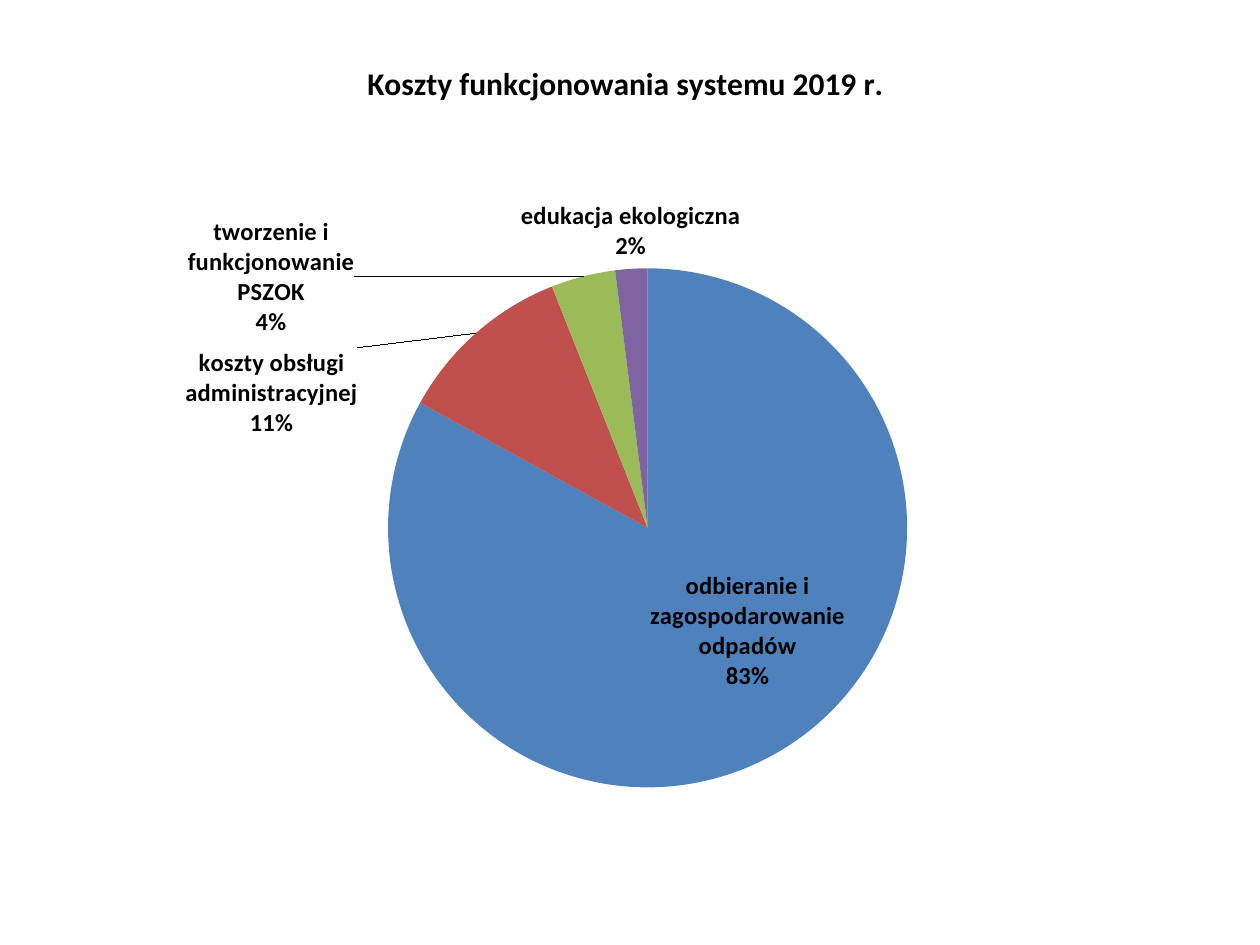
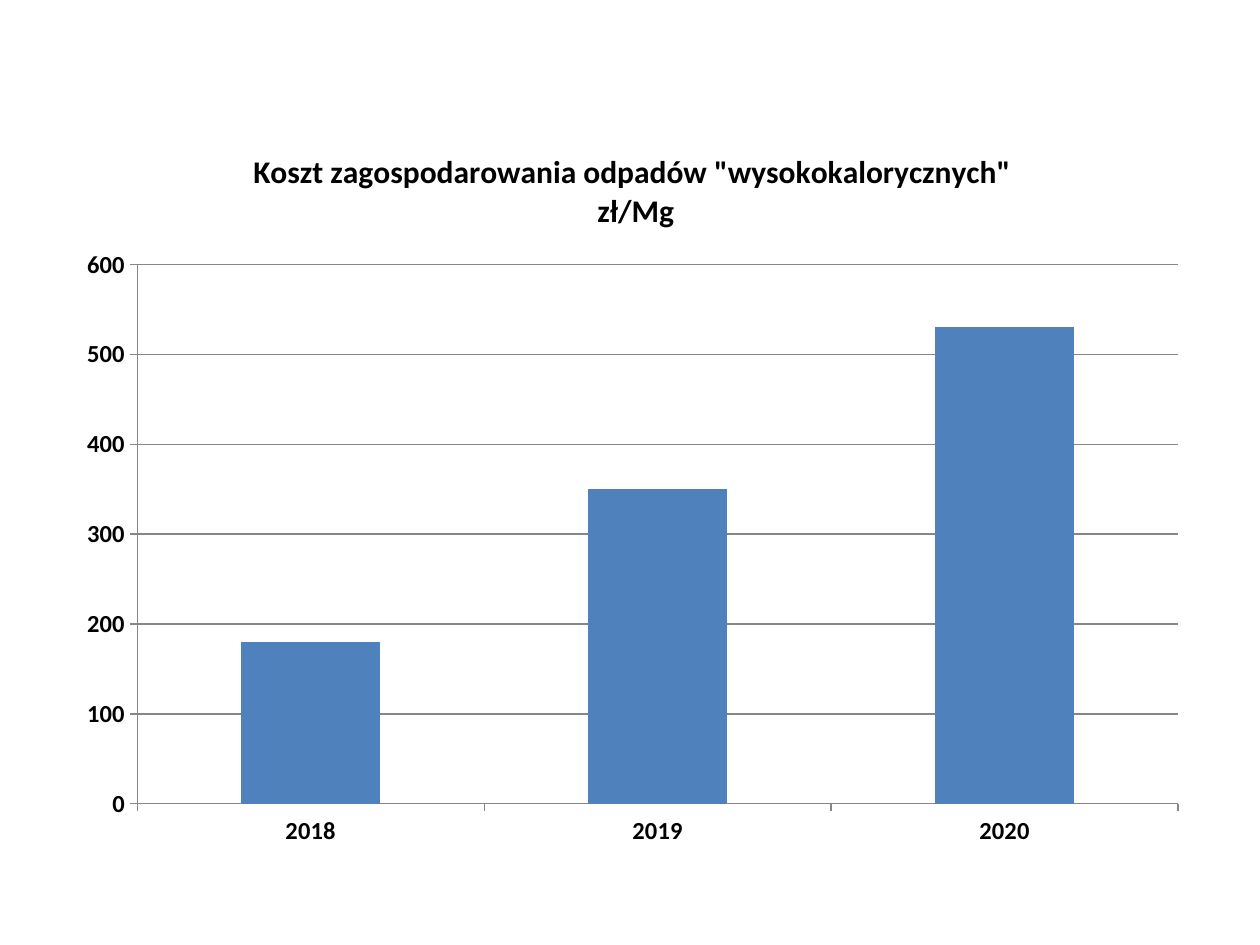
"""Build two chart slides on the costs of the waste management system."""
from dataclasses import dataclass

from lxml import etree
from pptx import Presentation
from pptx import util as u
from pptx.chart.data import CategoryChartData
from pptx.dml.color import RGBColor
from pptx.enum import chart as c
from pptx.oxml import ns


@dataclass(frozen=True)
class Theme:
    """Colours, font and type sizes shared by both slides."""
    font: str = "Calibri"
    text: str = "000000"
    grid: str = "868686"
    accents: tuple = ("4F81BD", "C0504D", "9BBB59", "8064A2")
    base_size: int = 10
    label_size: int = 14
    title_size: int = 18


THEME = Theme()
WIDTH, HEIGHT = 10, 7.5
LABEL = c.XL_LABEL_POSITION

COSTS = {
    "title": "Koszty funkcjonowania systemu 2019 r.",
    "box": (0.59, 0.44, 9, 6.76),
    "title_at": (2.87, 0.44),
    "plot": (3.08, 2.13, 4.12, 4.12),
}
COST_SHARES = [
    ("odbieranie i zagospodarowanie odpadów", 83, LABEL.CENTER, (0.03, -0.01)),
    ("koszty obsługi administracyjnej", 11, LABEL.OUTSIDE_END, (-0.1, 0.13)),
    ("tworzenie i funkcjonowanie PSZOK", 4, LABEL.OUTSIDE_END, (-0.2, 0.08)),
    ("edukacja ekologiczna", 2, LABEL.OUTSIDE_END, None),
]
DISPOSAL = {
    "title": 'Koszt zagospodarowania odpadów "wysokokalorycznych"\n zł/Mg',
    "box": (0.51, 0.99, 9.02, 5.84),
    "title_at": (1.98, 1.17),
    "plot": (1.09, 2.1, 8.26, 4.28),
}
DISPOSAL_PRICES = [("2018", 180), ("2019", 350), ("2020", 530)]


def colour(value):
    """Turn a hex string into a colour."""
    return RGBColor.from_string(value)


def style_font(font, size, bold=True):
    """Apply the theme font."""
    font.name, font.size, font.bold = THEME.font, u.Pt(size), bold
    font.color.rgb = colour(THEME.text)


def add_value(parent, tag, value):
    """Append a chart element with a val attribute."""
    etree.SubElement(parent, ns.qn(tag)).set("val", str(value))


def shares(place_on_slide, box):
    """Convert inches on the slide to shares of the chart box."""
    left, top, width, height = box
    origins = (left, top, 0, 0)
    sizes = (width, height, width, height)
    return [(length - origin) / size
            for length, origin, size in zip(place_on_slide, origins, sizes)]


def place(element, index, numbers, inner=False, edge=True):
    """Give a chart element a manual layout in shares of the chart."""
    for old in element.findall(ns.qn("c:layout")):
        element.remove(old)
    layout = etree.Element(ns.qn("c:layout"))
    manual = etree.SubElement(layout, ns.qn("c:manualLayout"))
    if inner:
        add_value(manual, "c:layoutTarget", "inner")
    if edge:
        add_value(manual, "c:xMode", "edge")
        add_value(manual, "c:yMode", "edge")
    for name, number in zip("xywh", numbers):
        add_value(manual, f"c:{name}", number)
    element.insert(index, layout)


def add_titled_chart(presentation, kind, content, rows):
    """Add a slide holding one titled chart."""
    slide = presentation.slides.add_slide(presentation.slide_layouts[6])
    data = CategoryChartData()
    data.categories = [row[0] for row in rows]
    data.add_series("Series 1", [row[1] for row in rows])
    box = content["box"]
    frame = slide.shapes.add_chart(kind, *map(u.Inches, box), data)
    chart = frame.chart
    chart.has_legend = False
    style_font(chart.font, THEME.base_size, bold=False)
    chart.has_title = True
    title = chart.chart_title.text_frame
    for number, line in enumerate(content["title"].split("\n")):
        paragraph = title.add_paragraph() if number else title.paragraphs[0]
        run = paragraph.add_run()
        run.text = line
        style_font(run.font, THEME.title_size)
    root = chart._chartSpace
    place(root.find(".//" + ns.qn("c:title")), 1,
          shares(content["title_at"], box))
    place(root.find(".//" + ns.qn("c:plotArea")), 0,
          shares(content["plot"], box), inner=True)
    return chart


def add_separator(labels):
    """Put the name and the percentage on separate lines."""
    separator = etree.Element(ns.qn("c:separator"))
    separator.text = "\n"
    labels.find(ns.qn("c:showBubbleSize")).addnext(separator)


def add_cost_slide(presentation):
    """Add the pie of system costs."""
    chart = add_titled_chart(presentation, c.XL_CHART_TYPE.PIE, COSTS, COST_SHARES)
    series = chart.plots[0].series[0]
    labels = series.data_labels
    style_font(labels.font, THEME.label_size)
    labels.show_value = False
    labels.show_category_name = labels.show_percentage = True
    group = series._element.find(ns.qn("c:dLbls"))
    add_separator(group)
    if group.find(ns.qn("c:showLeaderLines")) is None:
        add_value(group, "c:showLeaderLines", 1)
    group.find(ns.qn("c:showLeaderLines")).set("val", "1")
    for index, (_, _, position, offset) in enumerate(COST_SHARES):
        point = series.points[index]
        point.format.fill.solid()
        point.format.fill.fore_color.rgb = colour(THEME.accents[index])
        point.data_label.position = position
        style_font(point.data_label.font, THEME.label_size)
        label = group.findall(ns.qn("c:dLbl"))[index]
        for name, shown in (("Val", 0), ("CatName", 1), ("Percent", 1)):
            label.find(ns.qn(f"c:show{name}")).set("val", str(shown))
        add_separator(label)
        if offset:
            place(label, 1, offset, edge=False)


def add_disposal_slide(presentation):
    """Add the columns of disposal prices by year."""
    chart = add_titled_chart(presentation, c.XL_CHART_TYPE.COLUMN_CLUSTERED,
                             DISPOSAL, DISPOSAL_PRICES)
    plot = chart.plots[0]
    plot.gap_width, plot.vary_by_categories = 150, False
    fill = plot.series[0].format.fill
    fill.solid()
    fill.fore_color.rgb = colour(THEME.accents[0])
    value_axis = chart.value_axis
    value_axis.minimum_scale, value_axis.maximum_scale = 0, 600
    value_axis.major_unit = 100
    value_axis.has_major_gridlines = True
    for axis in (chart.category_axis, value_axis):
        style_font(axis.tick_labels.font, THEME.label_size)
        axis.major_tick_mark = c.XL_TICK_MARK.OUTSIDE
    for line in (chart.category_axis.format.line, value_axis.format.line,
                 value_axis.major_gridlines.format.line):
        line.color.rgb, line.width = colour(THEME.grid), u.Pt(0.75)


def main():
    """Build and save the presentation."""
    presentation = Presentation()
    presentation.slide_width = u.Inches(WIDTH)
    presentation.slide_height = u.Inches(HEIGHT)
    add_cost_slide(presentation)
    add_disposal_slide(presentation)
    presentation.save("out.pptx")


if __name__ == "__main__":
    main()
